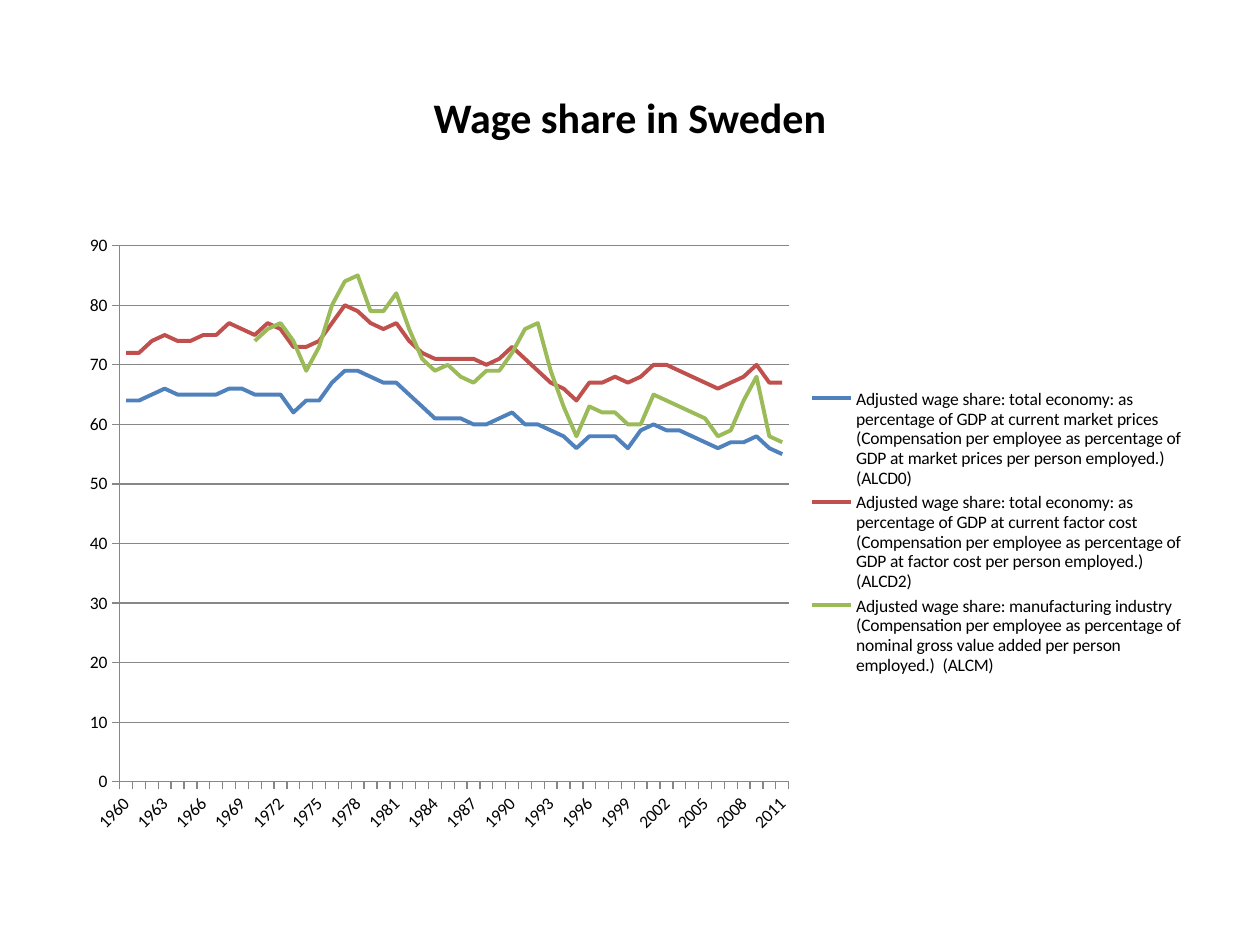
from dataclasses import dataclass

from lxml.etree import SubElement
from pptx import Presentation
from pptx.chart.data import CategoryChartData
from pptx.dml.color import RGBColor
from pptx.enum.chart import XL_CHART_TYPE, XL_LEGEND_POSITION, XL_TICK_MARK
from pptx.enum.text import MSO_ANCHOR, PP_ALIGN
from pptx.oxml import parse_xml
from pptx.oxml.ns import nsdecls, qn
from pptx.util import Cm, Pt


@dataclass(frozen=True)
class Theme:
    font: str = "Calibri"
    text: RGBColor = RGBColor(0, 0, 0)
    rule: RGBColor = RGBColor(0x87, 0x87, 0x87)
    series: tuple = ("4F81BD", "C0504D", "9BBB59")
    title_size: Pt = Pt(24)
    chart_size: Pt = Pt(10)
    series_width: Pt = Pt(2.25)
    rule_width: Pt = Pt(0.75)


def apply(obj, values):
    for name, value in values.items():
        setattr(obj, name, value)


class SlideBuilder:
    def __init__(self, prs, theme):
        self.theme = theme
        self.s = prs.slides.add_slide(prs.slide_layouts[5])

    def font(self, font, size, bold=False):
        apply(font, {"name": self.theme.font, "size": size, "bold": bold})
        font.color.rgb = self.theme.text

    def line(self, line, color, width):
        line.color.rgb = color
        line.width = width

    def title(self, text, box):
        sp = self.s.shapes.title
        apply(sp, box)
        tf = sp.text_frame
        apply(tf, {"word_wrap": True, "vertical_anchor": MSO_ANCHOR.MIDDLE})
        p = tf.paragraphs[0]
        p.alignment = PP_ALIGN.CENTER
        r = p.add_run()
        r.text = text
        self.font(r.font, self.theme.title_size, True)

    def line_chart(self, categories, series, box, plot_box):
        t = self.theme
        data = CategoryChartData()
        data.categories = categories
        for name, values in series.items():
            data.add_series(name, values)
        frame = self.s.shapes.add_chart(
            XL_CHART_TYPE.LINE, box["left"], box["top"], box["width"], box["height"], data)
        chart = frame.chart
        self.font(chart.font, t.chart_size)
        apply(chart, {"has_title": False, "has_legend": True})
        apply(chart.legend, {"position": XL_LEGEND_POSITION.RIGHT, "include_in_layout": False})
        chart.plots[0].vary_by_categories = False
        for ser, color in zip(chart.plots[0].series, t.series):
            ser.smooth = False
            self.line(ser.format.line, RGBColor.from_string(color), t.series_width)
        self.axes(chart)
        self.place_plot(chart, plot_box)

    def axes(self, chart):
        t = self.theme
        x, y = chart.category_axis, chart.value_axis
        for axis in (x, y):
            apply(axis, {"major_tick_mark": XL_TICK_MARK.OUTSIDE,
                         "minor_tick_mark": XL_TICK_MARK.NONE})
            self.font(axis.tick_labels.font, t.chart_size)
            self.line(axis.format.line, t.rule, t.rule_width)
        apply(y, {"minimum_scale": 0, "maximum_scale": 90, "major_unit": 10,
                  "has_major_gridlines": True})
        self.line(y.major_gridlines.format.line, t.rule, t.rule_width)
        cat = chart.plots[0].categories
        ax = chart.element.find(".//" + qn("c:catAx"))
        ax.find(qn("c:txPr")).find(qn("a:bodyPr")).set("rot", str(-45 * 60000))
        skip = parse_xml(f'<c:tickLblSkip {nsdecls("c")} val="3"/>')
        ax.find(qn("c:noMultiLvlLbl")).addprevious(skip)

    def place_plot(self, chart, plot_box):
        area = chart.element.find(".//" + qn("c:plotArea"))
        layout = area.find(qn("c:layout"))
        if layout is None:
            layout = parse_xml(f'<c:layout {nsdecls("c")}/>')
            area.insert(0, layout)
        manual = SubElement(layout, qn("c:manualLayout"))
        values = {"layoutTarget": "inner", "xMode": "edge", "yMode": "edge", **plot_box}
        for name, value in values.items():
            SubElement(manual, qn("c:" + name)).set("val", str(value))


YEARS = [str(year) for year in range(1960, 2012)]
WAGE_SHARES = {
    "Adjusted wage share: total economy: as percentage of GDP at current market prices "
    "(Compensation per employee as percentage of GDP at market prices per person employed.) "
    "(ALCD0)": [
        64, 64, 65, 66, 65, 65, 65, 65, 66, 66, 65, 65, 65, 62, 64, 64, 67, 69, 69, 68,
        67, 67, 65, 63, 61, 61, 61, 60, 60, 61, 62, 60, 60, 59, 58, 56, 58, 58, 58, 56,
        59, 60, 59, 59, 58, 57, 56, 57, 57, 58, 56, 55],
    "Adjusted wage share: total economy: as percentage of GDP at current factor cost "
    "(Compensation per employee as percentage of GDP at factor cost per person employed.) "
    "(ALCD2)": [
        72, 72, 74, 75, 74, 74, 75, 75, 77, 76, 75, 77, 76, 73, 73, 74, 77, 80, 79, 77,
        76, 77, 74, 72, 71, 71, 71, 71, 70, 71, 73, 71, 69, 67, 66, 64, 67, 67, 68, 67,
        68, 70, 70, 69, 68, 67, 66, 67, 68, 70, 67, 67],
    "Adjusted wage share: manufacturing industry (Compensation per employee as percentage "
    "of nominal gross value added per person employed.)  (ALCM)": [None] * 10 + [
        74, 76, 77, 74, 69, 73, 80, 84, 85, 79, 79, 82, 76, 71, 69, 70, 68, 67, 69, 69,
        72, 76, 77, 69, 63, 58, 63, 62, 62, 60, 60, 65, 64, 63, 62, 61, 58, 59, 64, 68,
        58, 57],
}


def main():
    prs = Presentation()
    apply(prs, {"slide_width": Cm(25.4), "slide_height": Cm(19.05)})
    slide = SlideBuilder(prs, Theme())
    column = {"left": Cm(1.27), "width": Cm(22.86)}
    slide.title("Wage share in Sweden", {**column, "top": Cm(0.76), "height": Cm(3.18)})
    slide.line_chart(YEARS, WAGE_SHARES, {**column, "top": Cm(4.45), "height": Cm(12.57)},
                     {"x": 0.05, "y": 0.04, "w": 0.59, "h": 0.86})
    prs.save("out.pptx")


if __name__ == "__main__":
    main()
